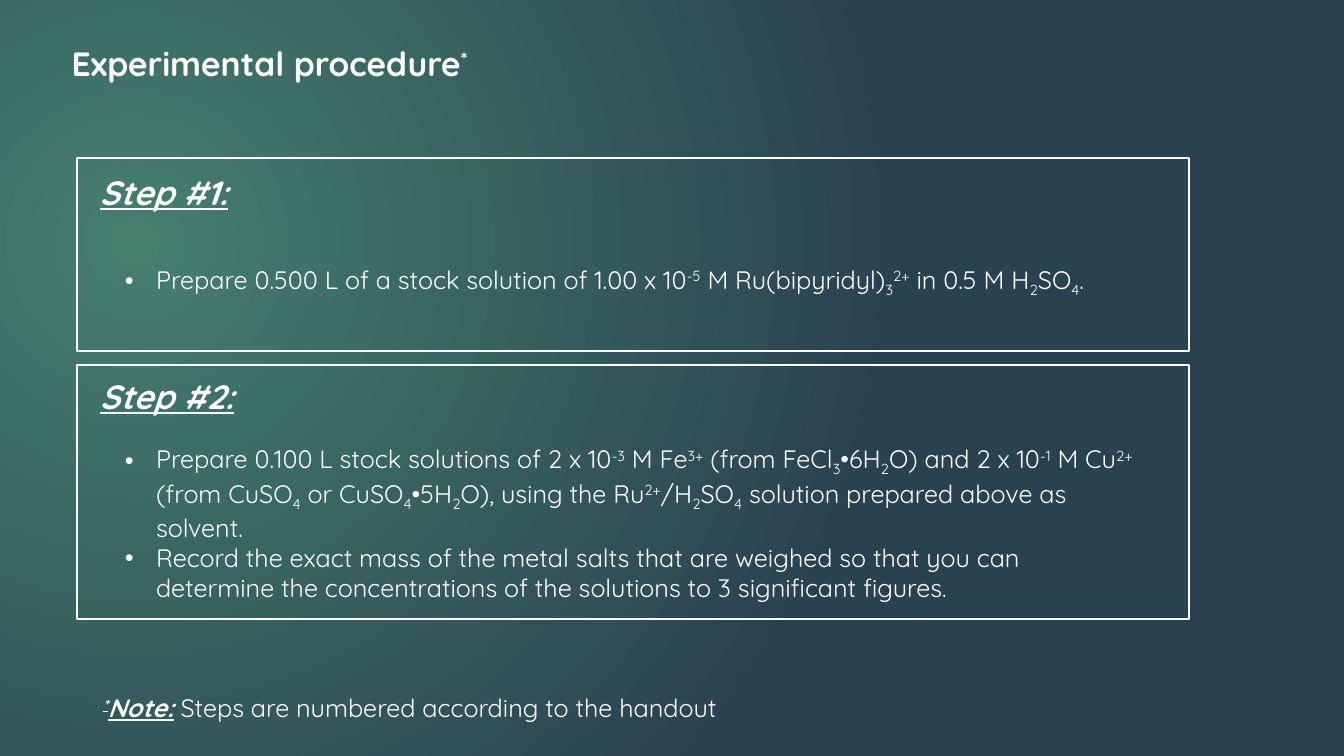
import pptx
import pptx.dml.color
import pptx.enum.shapes
import pptx.enum.text
import pptx.oxml
import pptx.oxml.ns
import pptx.util

WHITE = pptx.dml.color.RGBColor(0xFF, 0xFF, 0xFF)
GREEN = pptx.dml.color.RGBColor(0x45, 0x7F, 0x6E)
NAVY = pptx.dml.color.RGBColor(0x29, 0x42, 0x50)
FONT = "Quicksand"
HEADING_SIZE = 24
BODY_SIZE = 18
SLIDE_WIDTH = pptx.util.Inches(13.33)
SLIDE_HEIGHT = pptx.util.Inches(7.5)
COLUMN = SLIDE_WIDTH / 100
ROW = SLIDE_HEIGHT / 100
HEADING_LINE = 6.67
BODY_LINE = 5.33

STEPS = [
    {
        "panel": (5.7, 20.93, 82.8, 25.47),
        "heading": "Step #1:",
        "heading_offset": (-1.13, 1.2),
        "body_top": 13.33,
        "body_size": (88.43, BODY_LINE),
        "bullets": [
            "Prepare 0.500 L of a stock solution of 1.00 x 10^-5^ M "
            "Ru(bipyridyl)_3_^2+^ in 0.5 M H_2_SO_4_.",
        ],
    },
    {
        "panel": (5.7, 48.27, 82.8, 33.6),
        "heading": "Step #2:",
        "heading_offset": (-0.9, 0.8),
        "body_top": 9.73,
        "body_size": (76.95, 21.6),
        "bullets": [
            "Prepare 0.100 L stock solutions of 2 x 10^-3^ M Fe^3+^ "
            "(from FeCl_3_•6H_2_O) and 2 x 10^-1^ M Cu^2+^ "
            "(from CuSO_4_ or CuSO_4_•5H_2_O), using the "
            "Ru^2+^/H_2_SO_4_ solution prepared above as solvent.",
            "Record the exact mass of the metal salts that are weighed so that "
            "you can determine the concentrations of the solutions to 3 "
            "significant figures.",
        ],
    },
]


def grid_box(left, top, width, height):
    return tuple(
        round(value)
        for value in (left * COLUMN, top * ROW, width * COLUMN, height * ROW)
    )


def prepare_frame(shape, wrap):
    text_frame = shape.text_frame
    text_frame.word_wrap = wrap
    text_frame.auto_size = pptx.enum.text.MSO_AUTO_SIZE.SHAPE_TO_FIT_TEXT
    text_frame.vertical_anchor = pptx.enum.text.MSO_ANCHOR.TOP
    return text_frame


def add_text_box(slide, box, wrap=True):
    return prepare_frame(slide.shapes.add_textbox(*grid_box(*box)), wrap)


def add_run(paragraph, text, size, baseline=0, emphasis=False):
    run = paragraph.add_run()
    run.text = text
    run.font.name = FONT
    run.font.size = pptx.util.Pt(size)
    run.font.color.rgb = WHITE
    run.font.bold = run.font.italic = run.font.underline = emphasis
    if baseline:
        run.font._element.set("baseline", str(baseline * 1000))
    return run


def add_formula_text(paragraph, text, size):
    for raised, part in enumerate(text.split("^")):
        for lowered, piece in enumerate(part.split("_")):
            if piece:
                baseline = 30 if raised % 2 else -25 if lowered % 2 else 0
                add_run(paragraph, piece, size, baseline)


def add_bullet(paragraph):
    properties = paragraph._p.get_or_add_pPr()
    indent = pptx.util.Inches(0.31)
    properties.set("marL", str(indent))
    properties.set("indent", str(-indent))
    for tag, name, value in (("a:buFont", "typeface", "Arial"), ("a:buChar", "char", "•")):
        element = pptx.oxml.parse_xml(
            f'<{tag} {pptx.oxml.ns.nsdecls("a")} {name}="{value}"/>'
        )
        properties.append(element)


def paint_background(slide):
    fill = slide.background.fill
    fill.gradient()
    for stop, color, position in zip(fill.gradient_stops, (GREEN, NAVY), (0, 1)):
        stop.color.rgb = color
        stop.position = position
    gradient = slide.element.find(".//" + pptx.oxml.ns.qn("a:gradFill"))
    linear = gradient.find(pptx.oxml.ns.qn("a:lin"))
    circle = pptx.oxml.parse_xml(
        f'<a:path {pptx.oxml.ns.nsdecls("a")} path="circle">'
        '<a:fillToRect l="45000" t="65000" r="125000" b="100000"/></a:path>'
    )
    gradient.replace(linear, circle)


def add_title(slide, box):
    title = slide.shapes.title
    title.left, title.top, title.width, title.height = grid_box(*box)
    paragraph = prepare_frame(title, False).paragraphs[0]
    paragraph.alignment = pptx.enum.text.PP_ALIGN.LEFT
    add_formula_text(paragraph, "Experimental procedure^*^", HEADING_SIZE)
    for run in paragraph.runs:
        run.font.bold = True


def add_step(slide, step):
    left, top, width, height = step["panel"]
    panel = slide.shapes.add_shape(
        pptx.enum.shapes.MSO_SHAPE.RECTANGLE, *grid_box(left, top, width, height)
    )
    panel.shadow.inherit = False
    panel.fill.background()
    panel.line.color.rgb = WHITE
    panel.line.width = pptx.util.Pt(1.5)

    shift, drop = step["heading_offset"]
    heading = add_text_box(slide, (left + shift, top + drop, 15.23, HEADING_LINE))
    heading.paragraphs[0].alignment = pptx.enum.text.PP_ALIGN.CENTER
    add_run(heading.paragraphs[0], step["heading"], HEADING_SIZE, emphasis=True)

    body = add_text_box(slide, (left + 2.85, top + step["body_top"], *step["body_size"]))
    for index, text in enumerate(step["bullets"]):
        paragraph = body.add_paragraph() if index else body.paragraphs[0]
        add_bullet(paragraph)
        add_formula_text(paragraph, text, BODY_SIZE)


def add_note(slide, box):
    paragraph = add_text_box(slide, box, wrap=False).paragraphs[0]
    add_run(paragraph, "*", BODY_SIZE, baseline=30, emphasis=True)
    add_run(paragraph, "Note:", BODY_SIZE, emphasis=True)
    add_run(paragraph, " Steps are numbered according to the handout", BODY_SIZE)


def main():
    presentation = pptx.Presentation()
    presentation.slide_width = SLIDE_WIDTH
    presentation.slide_height = SLIDE_HEIGHT
    slide = presentation.slides.add_slide(presentation.slide_layouts[5])
    paint_background(slide)
    add_title(slide, (4.58, 5.07, 31.88, HEADING_LINE))
    for step in STEPS:
        add_step(slide, step)
    add_note(slide, (6.9, 90.93, 50.4, BODY_LINE))
    presentation.save("out.pptx")


if __name__ == "__main__":
    main()
